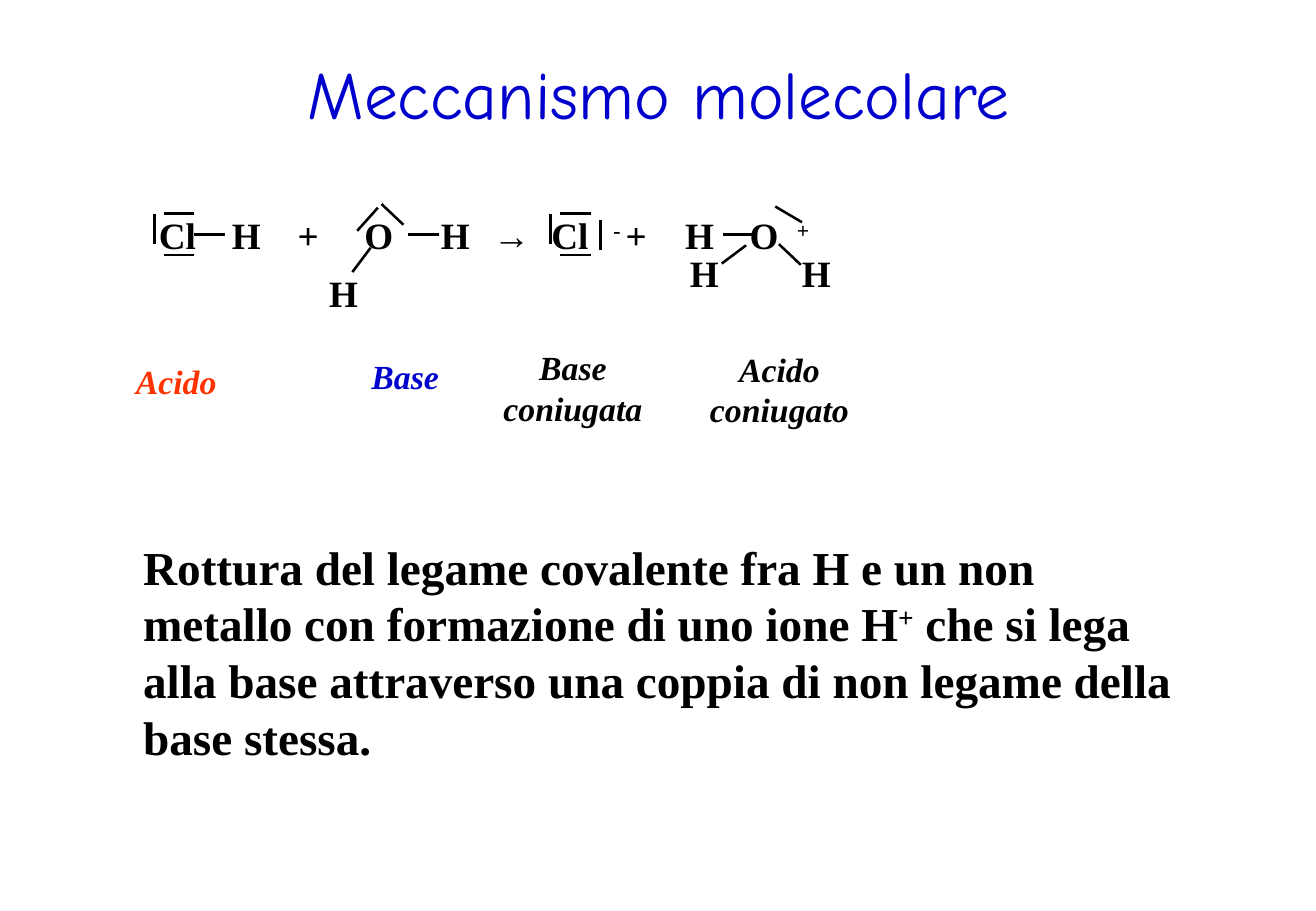
import pptx
import pptx.dml.color
import pptx.enum.shapes
import pptx.enum.text
import pptx.oxml
import pptx.oxml.ns
import pptx.util

Inches = pptx.util.Inches
COLORS = {"black": "000000", "blue": "0000CC", "red": "FF3300"}


class Deck:
    """Slide style and the current slide."""

    font = "Times New Roman"

    def __init__(self, prs):
        self.s = prs.slides.add_slide(prs.slide_layouts[6])

    def text(self, box, runs, size, color="black", align="LEFT",
             anchor="TOP", tabs=(), **font):
        """Add a text box; runs are (text, is superscript) pairs."""
        sp = self.s.shapes.add_textbox(*map(Inches, box))
        tf = sp.text_frame
        tf.word_wrap = True
        tf.vertical_anchor = pptx.enum.text.MSO_ANCHOR[anchor]
        p = tf.paragraphs[0]
        p.alignment = pptx.enum.text.PP_ALIGN[align]
        style = {"name": self.font, "size": pptx.util.Pt(size), "bold": True, **font}
        for words, raised in runs:
            r = p.add_run()
            r.text = words
            for key, value in style.items():
                setattr(r.font, key, value)
            r.font.color.rgb = pptx.dml.color.RGBColor.from_string(COLORS[color])
            if raised:
                r.font._element.set("baseline", "30000")
        if tabs:
            tab_list = pptx.oxml.xmlchemy.OxmlElement("a:tabLst")
            for stop in tabs:
                tab = pptx.oxml.xmlchemy.OxmlElement("a:tab")
                tab.set("pos", str(Inches(stop)))
                tab.set("algn", "l")
                tab_list.append(tab)
            p._p.get_or_add_pPr().append(tab_list)

    def line(self, x1, y1, x2, y2):
        """Add a bond or an electron pair."""
        c = self.s.shapes.add_connector(
            pptx.enum.shapes.MSO_CONNECTOR.STRAIGHT, *map(Inches, (x1, y1, x2, y2)))
        c.line.width = pptx.util.Pt(1.5)
        c.line.color.rgb = pptx.dml.color.RGBColor.from_string(COLORS["black"])
        c._element.spPr.append(pptx.oxml.xmlchemy.OxmlElement("a:effectLst"))


def main():
    prs = pptx.Presentation()
    prs.slide_width, prs.slide_height = Inches(10.83), Inches(7.5)
    deck = Deck(prs)

    # Title and explanation
    deck.text((1.17, 0.14, 8.5, 1.25), [("Meccanismo molecolare", False)], 40, "blue",
              "CENTER", "MIDDLE", name="Comic Neue", bold=False)
    deck.text((1.08, 4.38, 8.67, 1.97), [
        ("Rottura del legame covalente fra H e un non metallo "
         "con formazione di uno ione H", False),
        ("+", True),
        (" che si lega alla base attraverso una coppia di non legame "
         "della base stessa.", False)], 28)

    # Reaction, with each symbol on its own tab stop
    deck.text((1.21, 1.7, 8.42, 0.47), [
        ("Cl\tH\t+\tO\tH\t→\tCl\t", False), ("-", True),
        ("\t+\tH\tO\t", False), ("+", True)], 22,
        tabs=(0.6, 1.14, 1.69, 2.32, 2.75, 3.23, 3.74, 3.84, 4.33, 4.86, 5.25))
    for x, y in ((2.61, 2.18), (5.58, 2.01), (6.5, 2.01)):
        deck.text((x, y, 0.33, 0.47), [("H", False)], 22)

    # Electron pairs left, above and below each chlorine
    for x in (1.27, 4.53):
        deck.line(x, 1.76, x, 2.01)
        for y in (1.76, 2.1):
            deck.line(x + 0.08, y, x + 0.33, y)
    deck.line(4.94, 1.81, 4.94, 2.06)

    # Horizontal bonds
    for x in (1.6, 3.36, 5.95):
        deck.line(x, 1.93, x + 0.25, 1.93)

    # Slanted bonds and electron pairs around each oxygen
    for ends in ((2.9, 2.24, 3.05, 2.04), (3.14, 1.68, 3.32, 1.85),
                 (2.94, 1.9, 3.11, 1.71), (6.38, 1.7, 6.6, 1.83),
                 (6.14, 2.02, 5.94, 2.17), (6.41, 2.01, 6.59, 2.18)):
        deck.line(*ends)

    # Role of each species
    for words, box, color, align in (
            ("Acido", (1.02, 2.92, 1.17, 0.43), "red", "LEFT"),
            ("Base", (2.75, 2.88, 1.17, 0.43), "blue", "CENTER"),
            ("Base coniugata", (4, 2.81, 1.43, 0.77), "black", "CENTER"),
            ("Acido coniugato", (5.73, 2.82, 1.37, 0.77), "black", "CENTER")):
        deck.text(box, [(words, False)], 20, color, align, italic=True)

    prs.save("out.pptx")


if __name__ == "__main__":
    main()
